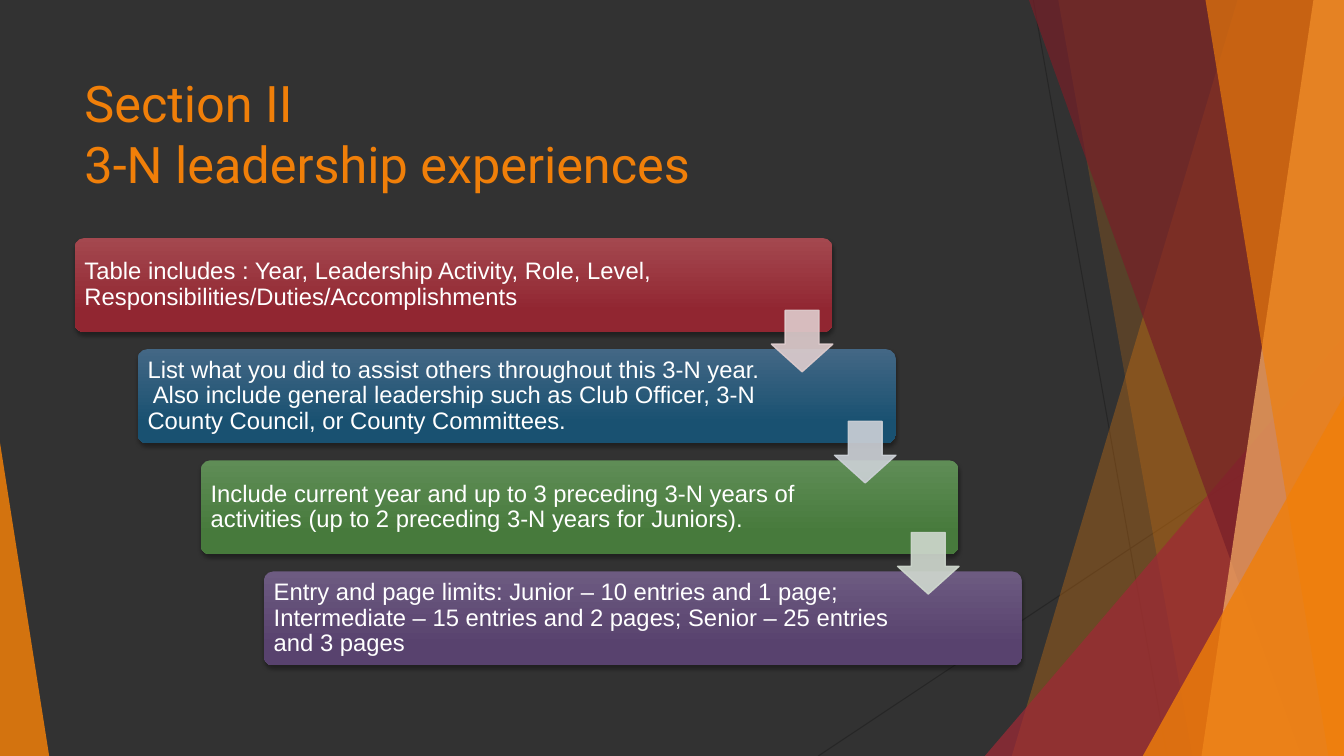
from lxml.etree import SubElement
from pptx import Presentation
from pptx.dml.color import RGBColor
from pptx.enum.shapes import MSO_CONNECTOR, MSO_SHAPE
from pptx.enum.text import MSO_ANCHOR, PP_ALIGN
from pptx.oxml.ns import qn
from pptx.util import Cm, Pt

WIDTH, HEIGHT = 33.87, 19.05
CARD_LEFT, CARD_TOP, CARD_WIDTH, CARD_HEIGHT = 1.88, 6, 19.1, 2.37
ARROW_LEFT, ARROW_TOP, ARROW_SIZE = 19.44, 7.82, 1.55
STEP_RIGHT, STEP_DOWN = 1.59, 2.8

COLORS = {
    "background": "323232",
    "line": "262626",
    "orange": "F07F09",
    "peach": "F9B268",
    "red": "9F2936",
    "maroon": "771F28",
    "text": "FFFFFF",
    "shadow": "000000",
}

FACETS = [
    (31.19, 0, 25.5, WIDTH, "orange", 30),
    (26.67, 0, 30.05, WIDTH, "orange", 20),
    (WIDTH, 8.46, 24.82, WIDTH, "red", 72),
    (25.93, 0, 32.79, WIDTH, "maroon", 70),
    (33.1, 0, 30.28, WIDTH, "peach", 70),
    (30.38, 0, 33.48, WIDTH, "orange", 65),
    (WIDTH, 9.98, 28.8, WIDTH, "orange", 80),
    (0, 11.15, 1.24, 0, "orange", 85),
]

STEPS = [
    ("Table includes : Year, Leadership Activity, Role, Level, "
     "Responsibilities/Duties/Accomplishments", "A4484F", "912631", "DFCDCE"),
    ("List what you did to assist others throughout this 3-N year.\v"
     " Also include general leadership such as Club Officer, 3-N County Council, "
     "or County Committees.", "436785", "195171", "CDD1D7"),
    ("Include current year and up to 3 preceding 3-N years of activities "
     "(up to 2 preceding 3-N years for Juniors).", "5F8D56", "477A3C", "D0D9CF"),
    ("Entry and page limits: Junior – 10 entries and 1 page; Intermediate – 15 entries "
     "and 2 pages; Senior – 25 entries and 3 pages", "6D5B81", "58426E", None),
]


def rgb(value):
    return RGBColor.from_string(value)


def set_opacity(fill_parent, percent):
    color = fill_parent.find(qn("a:solidFill"))[0]
    SubElement(color, qn("a:alpha")).set("val", str(percent * 1000))


def format_text(text_frame, font_name, size, color):
    for paragraph in text_frame.paragraphs:
        paragraph.alignment = PP_ALIGN.LEFT
        for run in paragraph.runs:
            run.font.name = font_name
            run.font.size = Pt(size)
            run.font.color.rgb = rgb(color)


def add_thin_line(slide, start, end):
    connector = slide.shapes.add_connector(
        MSO_CONNECTOR.STRAIGHT, *[Cm(value) for value in start + end])
    connector.line.color.rgb = rgb(COLORS["line"])
    connector.line.width = Pt(0.75)
    SubElement(connector._element.spPr, qn("a:effectLst"))


def add_facet(slide, top_x, top_y, bottom_x, side_x, color, opacity):
    builder = slide.shapes.build_freeform(Cm(top_x), Cm(top_y))
    corners = [(side_x, top_y), (side_x, HEIGHT), (bottom_x, HEIGHT)]
    builder.add_line_segments([(Cm(x), Cm(y)) for x, y in corners])
    shape = builder.convert_to_shape()
    shape.shadow.inherit = False
    shape.line.fill.background()
    shape.fill.solid()
    shape.fill.fore_color.rgb = rgb(COLORS[color])
    set_opacity(shape._element.spPr, opacity)


def add_title(slide, text):
    box = slide.shapes.add_textbox(Cm(1.88), Cm(1.7), Cm(23.88), Cm(3.66))
    box.text_frame.word_wrap = True
    box.text_frame.text = text
    format_text(box.text_frame, "Roboto", 36, COLORS["orange"])


def add_soft_shadow(shape):
    shape.shadow.inherit = False
    effects = shape._element.spPr.find(qn("a:effectLst"))
    shadow = SubElement(effects, qn("a:outerShdw"), blurRad=str(Pt(3)),
                        dist=str(Pt(2)), dir="5400000", rotWithShape="0")
    color = SubElement(shadow, qn("a:srgbClr"), val=COLORS["shadow"])
    SubElement(color, qn("a:alpha"), val="35000")


def add_card(slide, index, text, top_color, bottom_color):
    card = slide.shapes.add_shape(
        MSO_SHAPE.ROUNDED_RECTANGLE,
        Cm(CARD_LEFT + index * STEP_RIGHT), Cm(CARD_TOP + index * STEP_DOWN),
        Cm(CARD_WIDTH), Cm(CARD_HEIGHT))
    card.adjustments[0] = 0.1
    card.line.fill.background()
    card.fill.gradient()
    card.fill.gradient_angle = 270
    stops = zip(card.fill.gradient_stops, (0, 0.78), (top_color, bottom_color))
    for stop, position, color in stops:
        stop.position = position
        stop.color.rgb = rgb(color)
    add_soft_shadow(card)

    frame = card.text_frame
    frame.word_wrap = True
    frame.vertical_anchor = MSO_ANCHOR.MIDDLE
    frame.margin_left = Cm(0.18)
    frame.margin_right = Cm(3.1)
    frame.margin_top = frame.margin_bottom = Cm(0)
    frame.text = text
    frame.paragraphs[0].line_spacing = 0.9
    format_text(frame, "Arial", 17, COLORS["text"])


def add_down_arrow(slide, index, color):
    arrow = slide.shapes.add_shape(
        MSO_SHAPE.DOWN_ARROW,
        Cm(ARROW_LEFT + index * STEP_RIGHT), Cm(ARROW_TOP + index * STEP_DOWN),
        Cm(ARROW_SIZE), Cm(ARROW_SIZE))
    arrow.adjustments[0] = 0.55
    arrow.adjustments[1] = 0.45
    arrow.shadow.inherit = False
    arrow.fill.solid()
    arrow.fill.fore_color.rgb = rgb(color)
    arrow.line.color.rgb = rgb(color)
    arrow.line.width = Pt(1)
    properties = arrow._element.spPr
    set_opacity(properties, 90)
    set_opacity(properties.find(qn("a:ln")), 90)


def main():
    presentation = Presentation()
    presentation.slide_width = Cm(WIDTH)
    presentation.slide_height = Cm(HEIGHT)
    slide = presentation.slides.add_slide(presentation.slide_layouts[6])
    slide.background.fill.solid()
    slide.background.fill.fore_color.rgb = rgb(COLORS["background"])

    add_thin_line(slide, (26.04, 0), (29.41, HEIGHT))
    add_thin_line(slide, (WIDTH, 10.24), (20.62, HEIGHT))
    for facet in FACETS:
        add_facet(slide, *facet)

    add_title(slide, "Section II\v3-N leadership experiences")
    for index, (text, top_color, bottom_color, _) in enumerate(STEPS):
        add_card(slide, index, text, top_color, bottom_color)
    for index, (_, _, _, arrow_color) in enumerate(STEPS[:-1]):
        add_down_arrow(slide, index, arrow_color)

    presentation.save("out.pptx")


if __name__ == "__main__":
    main()
